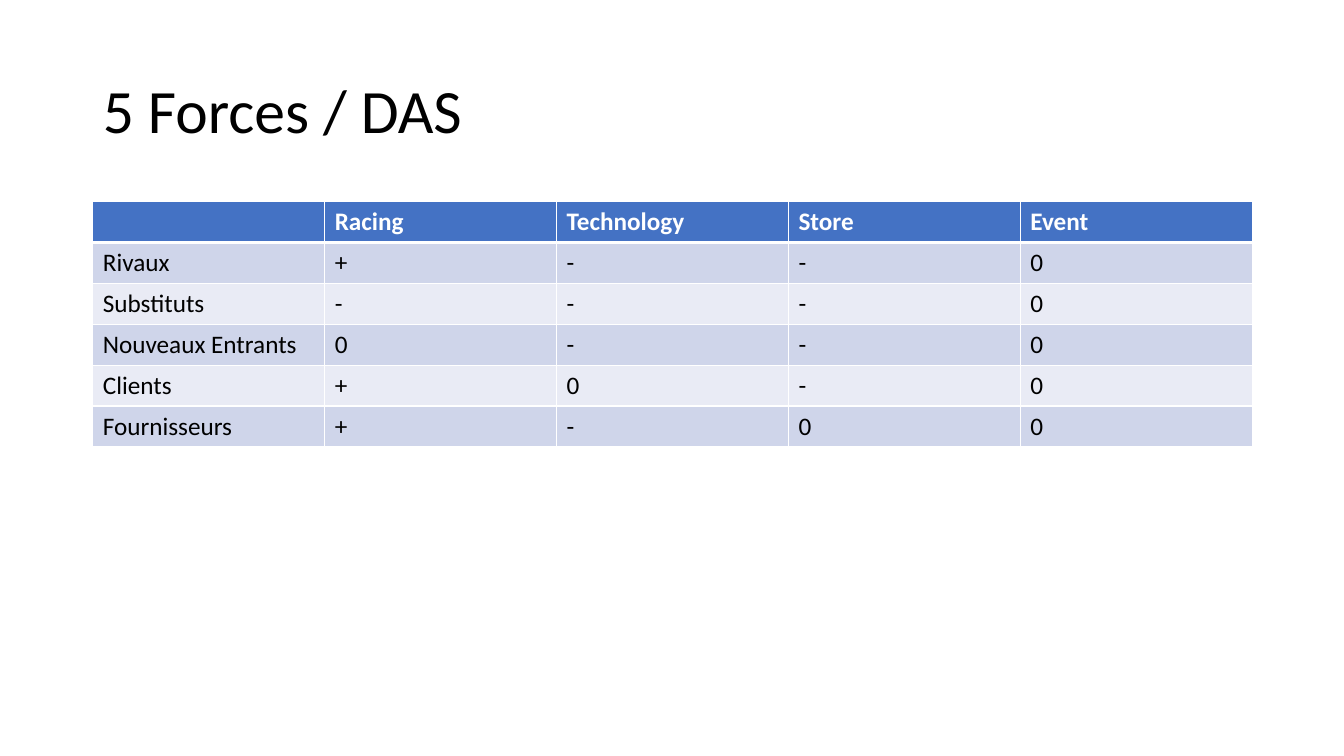
"""Build the "5 Forces / DAS" slide: one title and one table of ratings."""
from lxml import etree
from pptx import Presentation
from pptx.dml.color import RGBColor
from pptx.enum.text import MSO_ANCHOR, PP_ALIGN
from pptx.oxml.ns import qn
from pptx.util import Pt

TITLE = "5 Forces / DAS"
ROWS = [
    ("", "Racing", "Technology", "Store", "Event"),
    ("Rivaux", "+", "-", "-", "0"),
    ("Substituts", "-", "-", "-", "0"),
    ("Nouveaux Entrants", "0", "-", "-", "0"),
    ("Clients", "+", "0", "-", "0"),
    ("Fournisseurs", "+", "-", "0", "0"),
]

PX = 9144
SLIDE_WIDTH, SLIDE_HEIGHT = 1333, 750
TITLE_BOX = (92, 40, 1150, 145)
TABLE_BOX = (92, 200, 1150, 243)

FONT = "Calibri"
BLACK = RGBColor(0x00, 0x00, 0x00)
WHITE = RGBColor(0xFF, 0xFF, 0xFF)
HEADER_BLUE = RGBColor(0x44, 0x72, 0xC4)
BANDS = (RGBColor(0xE9, 0xEB, 0xF5), RGBColor(0xCF, 0xD5, 0xEA))
MIDDLE, LEFT = MSO_ANCHOR.MIDDLE, PP_ALIGN.LEFT


def scaled(box):
    return [length * PX for length in box]


def write(text_frame, text, size=18, color=BLACK, bold=False, line_spacing=None):
    paragraph = text_frame.paragraphs[0]
    paragraph.alignment = LEFT
    paragraph.line_spacing = line_spacing
    font = paragraph.font
    if text:
        run = paragraph.add_run()
        run.text = text
        font = run.font
    font.name, font.size, font.bold = FONT, Pt(size), bold
    font.color.rgb = color


def set_borders(cell, **widths):
    properties = cell._tc.get_or_add_tcPr()
    for index, side in enumerate("LRTB"):
        line = etree.Element(qn(f"a:ln{side}"), w=str(Pt(widths.get(side, 1))))
        fill = etree.SubElement(line, qn("a:solidFill"))
        etree.SubElement(fill, qn("a:srgbClr"), val=str(WHITE))
        properties.insert(index, line)


def add_title(slide):
    title = slide.shapes.title
    title.left, title.top, title.width, title.height = scaled(TITLE_BOX)
    title.text_frame.vertical_anchor = MIDDLE
    title.text_frame.word_wrap = True
    write(title.text_frame, TITLE, size=44, line_spacing=0.9)


def add_ratings(slide):
    left, top, width, height = scaled(TABLE_BOX)
    table = slide.shapes.add_table(
        len(ROWS), len(ROWS[0]), left, top, width, height
    ).table
    for row, texts in enumerate(ROWS):
        header = row == 0
        for column, text in enumerate(texts):
            cell = table.cell(row, column)
            cell.fill.solid()
            cell.fill.fore_color.rgb = HEADER_BLUE if header else BANDS[row % 2]
            set_borders(cell, T=3 if row == 1 else 1, B=3 if header else 1)
            write(cell.text_frame, text, color=WHITE if header else BLACK, bold=header)


def main():
    presentation = Presentation()
    presentation.slide_width = SLIDE_WIDTH * PX
    presentation.slide_height = SLIDE_HEIGHT * PX
    slide = presentation.slides.add_slide(presentation.slide_layouts[5])
    add_title(slide)
    add_ratings(slide)
    presentation.save("out.pptx")


if __name__ == "__main__":
    main()
